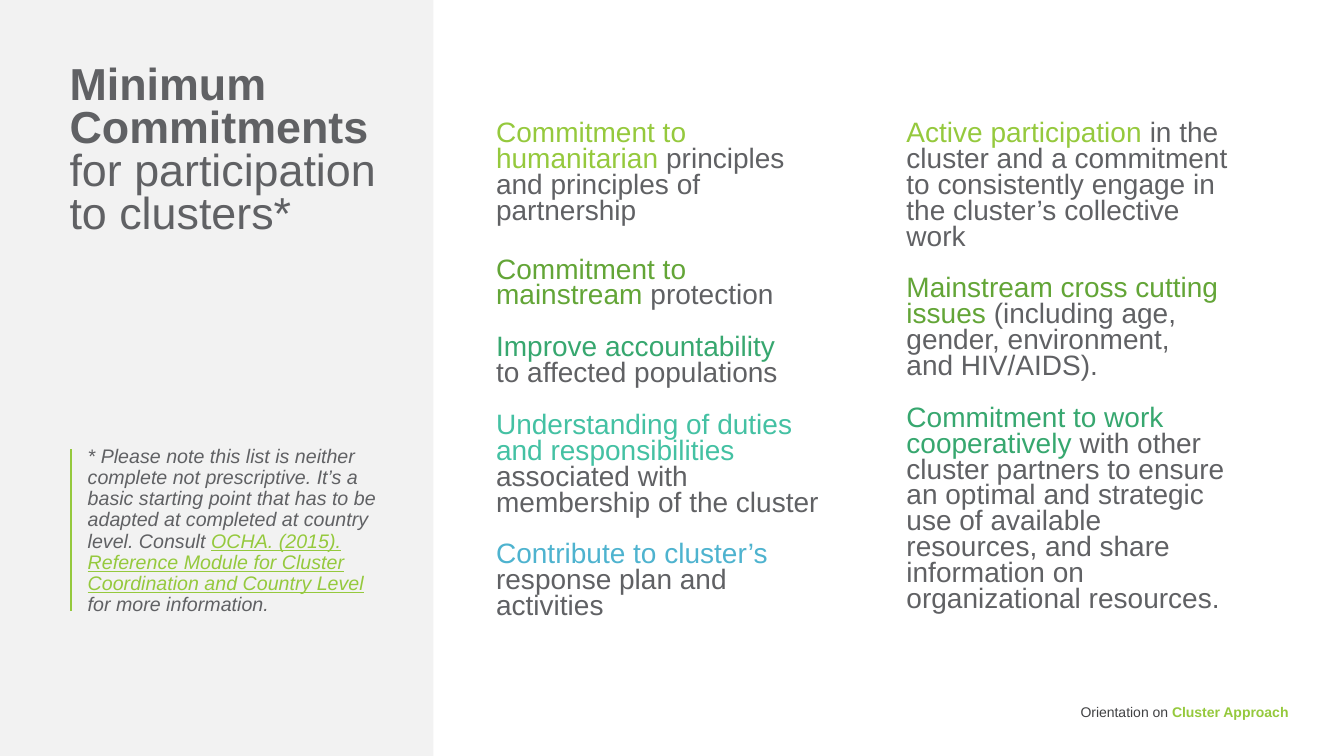
from dataclasses import dataclass

from lxml import etree
from pptx import Presentation
from pptx.dml.color import RGBColor
from pptx.enum.shapes import MSO_CONNECTOR, MSO_SHAPE
from pptx.enum.text import MSO_ANCHOR, MSO_AUTO_SIZE, PP_ALIGN
from pptx.oxml.ns import qn
from pptx.util import Inches, Pt

TOP, MIDDLE, BOTTOM = MSO_ANCHOR.TOP, MSO_ANCHOR.MIDDLE, MSO_ANCHOR.BOTTOM
LEFT, RIGHT = PP_ALIGN.LEFT, PP_ALIGN.RIGHT


@dataclass(frozen=True)
class Theme:
    font: str = "Arial"
    panel: str = "F2F2F2"
    text: str = "606164"
    footer: str = "404143"
    lime: str = "95C93D"
    leaf: str = "63A537"
    green: str = "37A76F"
    teal: str = "44C1A3"
    sky: str = "4EB3CF"
    title_size: int = 32
    body_size: int = 20
    note_size: int = 14
    footer_size: int = 10


theme = Theme()

PANEL_WIDTH = 4.3
MARGIN = 0.69
COLUMN_LEFT, COLUMN_TOP, COLUMN_WIDTH, COLUMN_HEIGHT = 4.92, 1.16, 3.21, 5.62
COLUMN_STEP = COLUMN_WIDTH + 0.86
PARAGRAPH_GAP = 18.5

COLUMNS = [
    [
        ("Commitment to humanitarian ", theme.lime,
         "principles and principles of partnership", 0),
        ("Commitment to\nmainstream ", theme.leaf, "protection", 23.5),
        ("Improve accountability\n", theme.green,
         "to affected populations", PARAGRAPH_GAP),
        ("Understanding of duties and responsibilities ", theme.teal,
         "associated with membership of the cluster", PARAGRAPH_GAP),
        ("Contribute to cluster’s ", theme.sky,
         "response plan and activities", PARAGRAPH_GAP),
    ],
    [
        ("Active participation ", theme.lime,
         "in the cluster and a commitment\nto consistently engage in\n"
         "the cluster’s collective work", 0),
        ("Mainstream cross cutting issues ", theme.leaf,
         "(including age, gender, environment,\nand HIV/AIDS).", PARAGRAPH_GAP),
        ("Commitment to work cooperatively ", theme.green,
         "with other cluster partners to ensure an optimal and strategic use of "
         "available resources, and share information on organizational resources.",
         PARAGRAPH_GAP),
    ],
]


def place(box, bounds, insets, anchor):
    """Position a text shape (inches) and fix its wrapping, insets and anchor."""
    box.left, box.top, box.width, box.height = map(Inches, bounds)
    frame = box.text_frame
    frame.auto_size = MSO_AUTO_SIZE.NONE
    frame.word_wrap = True
    frame.vertical_anchor = anchor
    (frame.margin_left, frame.margin_top,
     frame.margin_right, frame.margin_bottom) = map(Inches, insets)
    return frame


def write(para, size, line_spacing, spans, align=LEFT):
    """Fill a paragraph with (text, colour, font flags); newlines become breaks."""
    para.alignment = align
    para.line_spacing = line_spacing
    para.space_before = para.space_after = Pt(0)
    para.font.name = theme.font
    para.font.size = Pt(size)
    for text, colour, flags in spans:
        for index, line in enumerate(text.split("\n")):
            if index:
                para.add_line_break()
            if line:
                span = para.add_run()
                span.text = line
                span.font.color.rgb = RGBColor.from_string(colour)
                for flag, value in flags.items():
                    setattr(span.font, flag, value)


deck = Presentation()
deck.slide_width, deck.slide_height = Inches(13.33), Inches(7.5)
page = deck.slides.add_slide(deck.slide_layouts.get_by_name("Two Content"))
title, *bodies = [shape for shape in page.placeholders]

panel = page.shapes.add_shape(
    MSO_SHAPE.RECTANGLE, 0, 0, Inches(PANEL_WIDTH), deck.slide_height)
panel.shadow.inherit = False
panel.fill.solid()
panel.fill.fore_color.rgb = RGBColor.from_string(theme.panel)
panel.line.fill.background()
title._element.addprevious(panel._element)

frame = place(title, (MARGIN, 0.26, PANEL_WIDTH - MARGIN, 2.5),
              (0, 0.05, 0.1, 0.05), MIDDLE)
write(frame.paragraphs[0], theme.title_size, 0.8, [
    ("Minimum\nCommitments\n", theme.text, {"bold": True}),
    ("for participation to clusters*", theme.text, {"bold": False}),
])

for column, (body, commitments) in enumerate(zip(bodies, COLUMNS)):
    bounds = (COLUMN_LEFT + column * COLUMN_STEP, COLUMN_TOP,
              COLUMN_WIDTH, COLUMN_HEIGHT)
    frame = place(body, bounds, (0, 0.05, 0, 0.05), TOP)
    for index, (lead, colour, rest, gap) in enumerate(commitments):
        para = frame.add_paragraph() if index else frame.paragraphs[0]
        properties = para._p.get_or_add_pPr()
        properties.set("marL", "0")
        properties.set("indent", "0")
        etree.SubElement(properties, qn("a:buNone"))
        write(para, theme.body_size, 0.77,
              [(lead, colour, {}), (rest, theme.text, {})])
        para.space_before = Pt(gap)

note = page.shapes.add_textbox(0, 0, 0, 0)
frame = place(note, (0.87, 4.45, 3.18, 1.71), (0, 0.05, 0.1, 0.05), BOTTOM)
write(frame.paragraphs[0], theme.note_size, 0.9, [
    ("* Please note this list is neither complete not prescriptive. It’s a basic "
     "starting point that has to be adapted at completed at country level. Consult ",
     theme.text, {"italic": True}),
    ("OCHA. (2015). Reference Module for Cluster Coordination and Country Level",
     theme.lime, {"italic": True, "underline": True}),
    ("\nfor more information.", theme.text, {"italic": True}),
])

rule = page.shapes.add_connector(
    MSO_CONNECTOR.STRAIGHT, Inches(0.7), Inches(6.06), Inches(0.7), Inches(4.45))
rule.line.color.rgb = RGBColor.from_string(theme.lime)
rule.line.width = Pt(1.5)
etree.SubElement(rule._element.spPr, qn("a:effectLst"))

footer = page.shapes.add_textbox(0, 0, 0, 0)
frame = place(footer, (9.91, 6.91, 2.87, 0.26), (0.1, 0.1, 0, 0.1), TOP)
write(frame.paragraphs[0], theme.footer_size, 0.8, [
    ("Orientation on ", theme.footer, {}),
    ("Cluster Approach", theme.lime, {"bold": True}),
], RIGHT)

deck.save("out.pptx")
